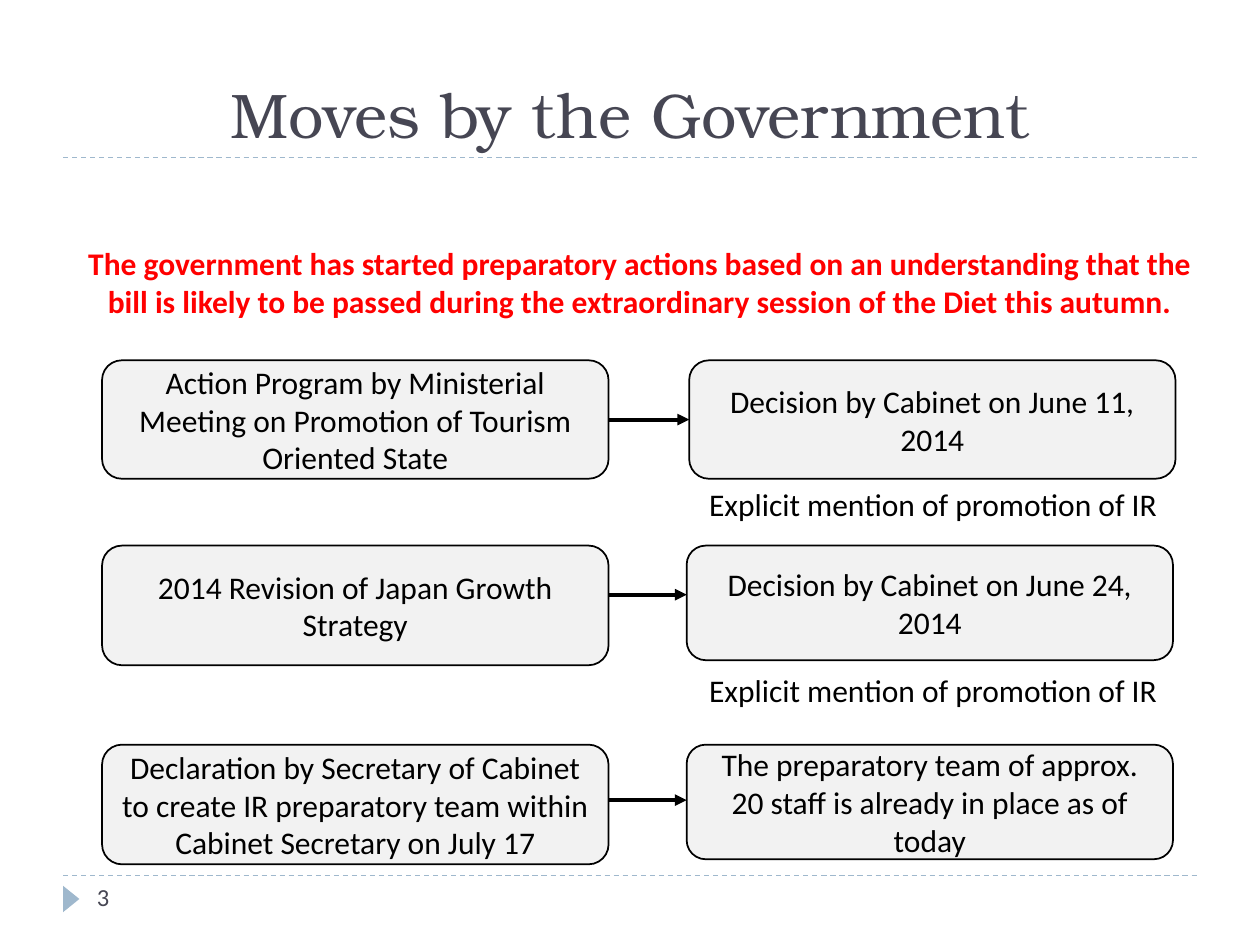
from lxml import etree
from pptx import Presentation
from pptx.dml.color import RGBColor
from pptx.enum.dml import MSO_LINE
from pptx.enum.shapes import MSO_CONNECTOR, MSO_SHAPE
from pptx.enum.text import MSO_ANCHOR, PP_ALIGN
from pptx.oxml.ns import qn
from pptx.util import Pt

PX = 9144
STRAIGHT = MSO_CONNECTOR.STRAIGHT
ROUNDED, TRIANGLE = MSO_SHAPE.ROUNDED_RECTANGLE, MSO_SHAPE.ISOSCELES_TRIANGLE
DASH = MSO_LINE.DASH
LEFT, CENTER = PP_ALIGN.LEFT, PP_ALIGN.CENTER
TOP, MIDDLE, BOTTOM = MSO_ANCHOR.TOP, MSO_ANCHOR.MIDDLE, MSO_ANCHOR.BOTTOM
THEME = {
    "heading": "TeX Gyre Bonum", "body": "Calibri",
    "title_size": 36, "body_size": 18, "number_size": 14,
    "ink": RGBColor.from_string("000000"),
    "slate": RGBColor.from_string("464653"),
    "accent": RGBColor.from_string("9FB8CD"),
    "alert": RGBColor.from_string("FF0000"),
    "box": RGBColor.from_string("F2F2F2"),
}


def write(sp, text, size="body_size", color="ink", font="body",
          align=CENTER, anchor=TOP, bold=False):
    tf = sp.text_frame
    tf.word_wrap = True
    tf.vertical_anchor = anchor
    tf.text = text
    p = tf.paragraphs[0]
    p.alignment = align
    r = p.runs[0]
    r.font.name = THEME[font]
    r.font.size = Pt(THEME[size])
    r.font.color.rgb = THEME[color]
    r.font.bold = bold


def connect(x1, y1, x2, y2, color, width):
    sp = s.shapes.add_connector(STRAIGHT, x1 * PX, y1 * PX, x2 * PX, y2 * PX)
    sp.line.color.rgb = THEME[color]
    sp.line.width = Pt(width)
    etree.SubElement(sp._element.spPr, qn("a:effectLst"))
    return sp


prs = Presentation()
prs.slide_width, prs.slide_height = 1000 * PX, 750 * PX
s = prs.slides.add_slide(prs.slide_layouts[6])

for y in (695, 125):
    rule = connect(50, y, 950, y, "accent", 0.75)
    rule.line.dash_style = DASH

marker = s.shapes.add_shape(TRIANGLE, 46 * PX, 707 * PX, 21 * PX, 13 * PX)
marker.rotation = 90
marker.shadow.inherit = False
marker.fill.solid()
marker.fill.fore_color.rgb = THEME["accent"]
marker.line.fill.background()

title = s.shapes.add_textbox(50 * PX, 25 * PX, 900 * PX, 100 * PX)
write(title, "Moves by the Government", "title_size", "slate", "heading", anchor=BOTTOM)
number = s.shapes.add_textbox(67 * PX, 695 * PX, 217 * PX, 40 * PX)
write(number, "3", "number_size", "slate", align=LEFT)
summary = s.shapes.add_textbox(59 * PX, 189 * PX, 898 * PX, 71 * PX)
write(summary, "The government has started preparatory actions based on an understanding "
      "that the bill is likely to be passed during the extraordinary session of the "
      "Diet this autumn.", color="alert", bold=True)

rows = [
    (286, 94, 547, 94, 333,
     "Action Program by Ministerial Meeting on Promotion of Tourism Oriented State",
     "Decision by Cabinet on June 11, 2014"),
    (433, 95, 545, 91, 472,
     "2014 Revision of Japan Growth Strategy",
     "Decision by Cabinet on June 24, 2014"),
    (591, 95, 545, 91, 635,
     "Declaration by Secretary of Cabinet to create IR preparatory team within "
     "Cabinet Secretary on July 17",
     "The preparatory team of approx. 20 staff is already in place as of today"),
]
for y, move_h, result_x, result_h, arrow_y, move, result in rows:
    boxes = []
    for x, w, h, text in ((81, 402, move_h, move), (result_x, 386, result_h, result)):
        sp = s.shapes.add_shape(ROUNDED, x * PX, y * PX, w * PX, h * PX)
        sp.shadow.inherit = False
        sp.fill.solid()
        sp.fill.fore_color.rgb = THEME["box"]
        sp.line.color.rgb = THEME["ink"]
        sp.line.width = Pt(1)
        write(sp, text, anchor=MIDDLE)
        boxes.append(sp)
    arrow = connect(483, arrow_y, result_x, arrow_y, "ink", 2.25)
    etree.SubElement(arrow.line._get_or_add_ln(), qn("a:tailEnd"), type="triangle")
    if arrow_y * 2 == y * 2 + move_h:
        arrow.begin_connect(boxes[0], 3)
        arrow.end_connect(boxes[1], 1)

for y in (380, 528):
    note = s.shapes.add_textbox(553 * PX, y * PX, 394 * PX, 40 * PX)
    write(note, "Explicit mention of promotion of IR", align=LEFT)

prs.save("out.pptx")
